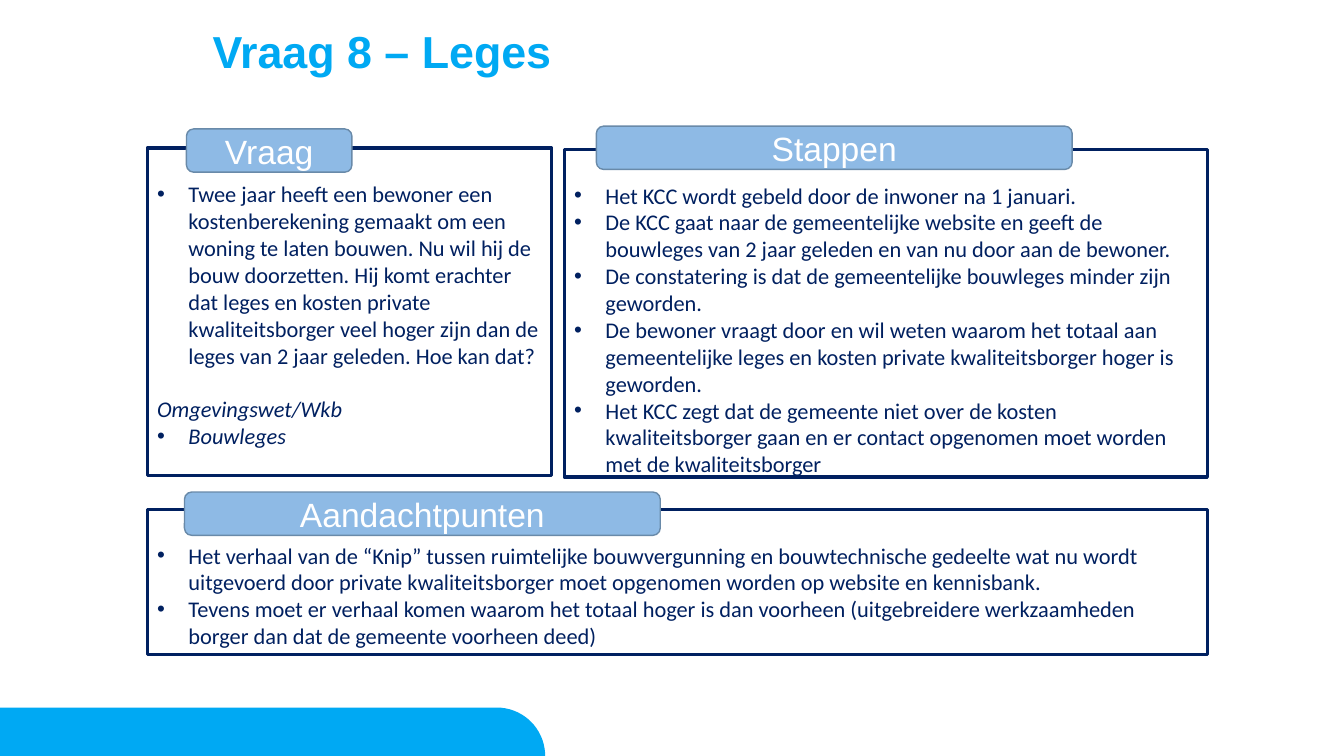
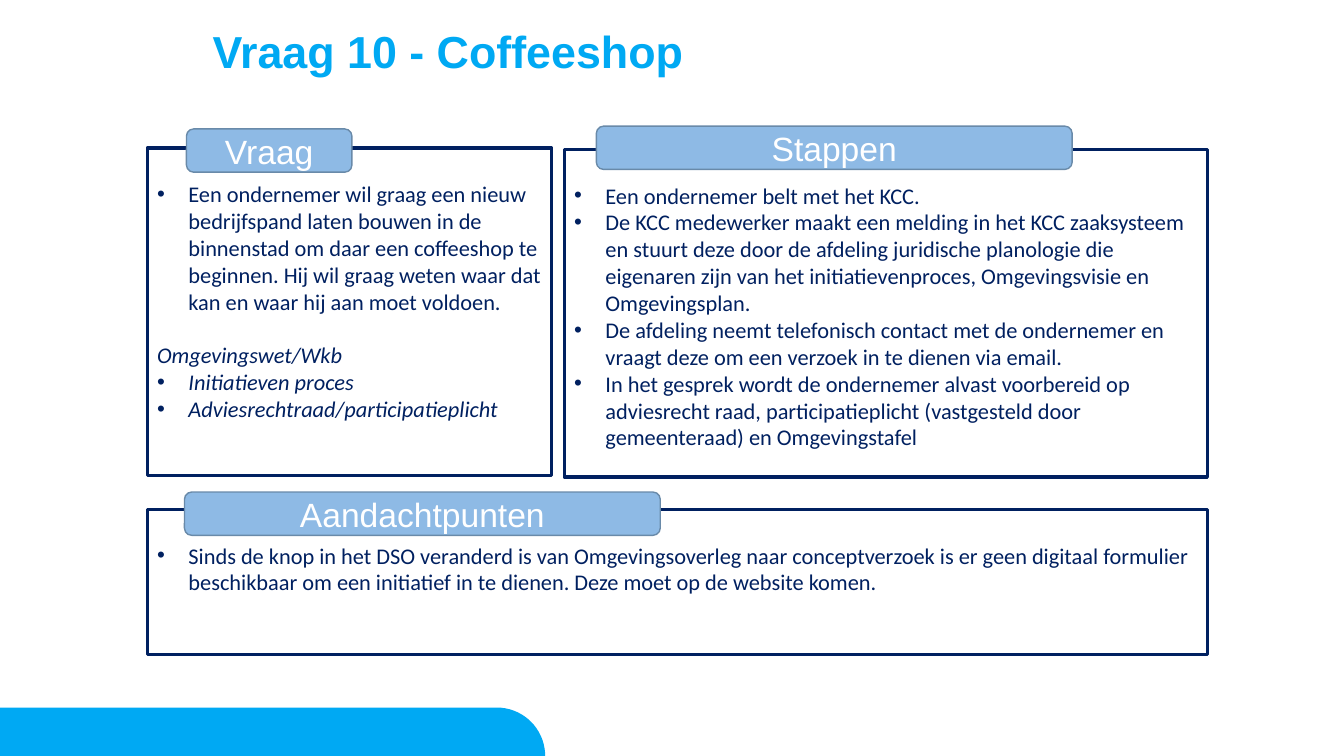
import math

from lxml import etree
from pptx import Presentation
from pptx.dml.color import RGBColor
from pptx.enum.shapes import MSO_SHAPE
from pptx.enum.text import MSO_ANCHOR, MSO_AUTO_SIZE, PP_ALIGN
from pptx.oxml.ns import qn
from pptx.util import Cm, Pt

RECTANGLE, ROUNDED = MSO_SHAPE.RECTANGLE, MSO_SHAPE.ROUNDED_RECTANGLE
TOP, MIDDLE = MSO_ANCHOR.TOP, MSO_ANCHOR.MIDDLE
LEFT, CENTER = PP_ALIGN.LEFT, PP_ALIGN.CENTER
NO_FIT = MSO_AUTO_SIZE.NONE
TITLE_ONLY = 5

SLIDE_WIDTH, SLIDE_HEIGHT = 33.87, 19.05
BRIGHT, NAVY, TAB_FILL, TAB_LINE, WHITE = "00A9F3", "002060", "8EBAE5", "698AA9", "FFFFFF"

TITLE_BOX = (5.11, 0.61, 25.73, 1.98)
BAND_WIDTH, BAND_HEIGHT = 13.74, 1.22
TAB_HEIGHT = 1.09
HANGING_INDENT = 0.79
TOPIC_GAP = 19

TITLE_FONT = {"name": "Arial", "size": Pt(32), "bold": True}
TAB_FONT = {"name": "Arial", "size": Pt(24)}
BODY_FONT = {"name": "Calibri", "size": Pt(16)}
TOPIC_FONT = {**BODY_FONT, "italic": True}

# heading: (panel box, tab offset from the panel corner and tab width)
PANELS = {
    "Vraag": ((3.71, 3.73, 10.19, 8.26), (0.99, -0.48, 4.17)),
    "Stappen": ((14.22, 3.76, 16.21, 8.26), (0.81, -0.58, 11.99)),
    "Aandachtpunten": ((3.71, 12.83, 26.72, 3.66), (0.94, -0.43, 11.99)),
}
TOPIC_HEADING = "Omgevingswet/Wkb"

CASES = [
    {
        "title": "Vraag 8 – Leges",
        "Vraag": [
            "Twee jaar heeft een bewoner een kostenberekening gemaakt om een woning te laten "
            "bouwen. Nu wil hij de bouw doorzetten. Hij komt erachter dat leges en kosten private "
            "kwaliteitsborger veel hoger zijn dan de leges van 2 jaar geleden. Hoe kan dat?",
        ],
        "topics": ["Bouwleges"],
        "Stappen": [
            "Het KCC wordt gebeld door de inwoner na 1 januari.",
            "De KCC gaat naar de gemeentelijke website en geeft de bouwleges van 2 jaar geleden "
            "en van nu door aan de bewoner.",
            "De constatering is dat de gemeentelijke bouwleges minder zijn geworden.",
            "De bewoner vraagt door en wil weten waarom het totaal aan gemeentelijke leges en "
            "kosten private kwaliteitsborger hoger is geworden.",
            "Het KCC zegt dat de gemeente niet over de kosten kwaliteitsborger gaan en er contact "
            "opgenomen moet worden met de kwaliteitsborger",
        ],
        "Aandachtpunten": [
            "Het verhaal van de “Knip” tussen ruimtelijke bouwvergunning en bouwtechnische "
            "gedeelte wat nu wordt uitgevoerd door private kwaliteitsborger moet opgenomen worden "
            "op website en kennisbank.",
            "Tevens moet er verhaal komen waarom het totaal hoger is dan voorheen (uitgebreidere "
            "werkzaamheden borger dan dat de gemeente voorheen deed)",
        ],
    },
    {
        "title": "Vraag 10 - Coffeeshop",
        "Vraag": [
            "Een ondernemer wil graag een nieuw bedrijfspand laten bouwen in de binnenstad om "
            "daar een coffeeshop te beginnen. Hij wil graag weten waar dat kan en waar hij aan "
            "moet voldoen.",
        ],
        "topics": ["Initiatieven proces", "Adviesrechtraad/participatieplicht"],
        "Stappen": [
            "Een ondernemer belt met het KCC.",
            "De KCC medewerker maakt een melding in het KCC zaaksysteem en stuurt deze door de "
            "afdeling juridische planologie die eigenaren zijn van het initiatievenproces, "
            "Omgevingsvisie en Omgevingsplan.",
            "De afdeling neemt telefonisch contact met de ondernemer en vraagt deze om een "
            "verzoek in te dienen via email.",
            "In het gesprek wordt de ondernemer alvast voorbereid op adviesrecht raad, "
            "participatieplicht (vastgesteld door gemeenteraad) en Omgevingstafel",
        ],
        "Aandachtpunten": [
            "Sinds de knop in het DSO veranderd is van Omgevingsoverleg naar conceptverzoek is er "
            "geen digitaal formulier beschikbaar om een initiatief in te dienen. Deze moet op de "
            "website komen.",
        ],
    },
]


def color(hex_string):
    return RGBColor.from_string(hex_string)


def set_all(target, values):
    for name, value in values.items():
        setattr(target, name, value)


def set_frame(frame, anchor, top=0.13, bottom=0.13):
    set_all(frame, {
        "word_wrap": True, "auto_size": NO_FIT, "vertical_anchor": anchor,
        "margin_left": Cm(0.25), "margin_right": Cm(0.25),
        "margin_top": Cm(top), "margin_bottom": Cm(bottom),
    })


def write(para, text, font, hex_string, align=LEFT):
    para.alignment = align
    span = para.add_run()
    span.text = text
    set_all(span.font, font)
    span.font.color.rgb = color(hex_string)


def add_bullet(para):
    properties = para._p.get_or_add_pPr()
    properties.set("marL", str(Cm(HANGING_INDENT)))
    properties.set("indent", str(-Cm(HANGING_INDENT)))
    etree.SubElement(properties, qn("a:buFont")).set("typeface", "Arial")
    etree.SubElement(properties, qn("a:buChar")).set("char", "•")


def add_box(slide, kind, box, line, width, fill=None):
    shape = slide.shapes.add_shape(kind, *map(Cm, box))
    shape.shadow.inherit = False
    if fill:
        shape.fill.solid()
        shape.fill.fore_color.rgb = color(fill)
    else:
        shape.fill.background()
    shape.line.color.rgb = color(line)
    shape.line.width = Pt(width)
    return shape


def add_band(slide):
    """Draw the bottom band, whose upper right corner is a quarter circle."""
    top, center = SLIDE_HEIGHT - BAND_HEIGHT, BAND_WIDTH - BAND_HEIGHT
    angles = [math.radians(degrees) for degrees in range(90, -1, -5)]
    corner = [(Cm(center + BAND_HEIGHT * math.cos(angle)),
               Cm(SLIDE_HEIGHT - BAND_HEIGHT * math.sin(angle))) for angle in angles]
    builder = slide.shapes.build_freeform(0, Cm(SLIDE_HEIGHT))
    builder.add_line_segments([(0, Cm(top)), *corner], close=True)
    band = builder.convert_to_shape()
    band.shadow.inherit = False
    band.fill.solid()
    band.fill.fore_color.rgb = color(BRIGHT)
    band.line.fill.background()


def add_title(slide, text, box):
    title = slide.shapes.title
    set_all(title, dict(zip(("left", "top", "width", "height"), map(Cm, box))))
    set_frame(title.text_frame, TOP)
    para = title.text_frame.paragraphs[0]
    para.line_spacing = 0.9
    write(para, text, TITLE_FONT, BRIGHT)


def add_panel(slide, heading, box, tab, points, topics=()):
    """Draw an outlined panel with bullets, optional topics and a heading tab."""
    frame = add_box(slide, RECTANGLE, box, NAVY, 2.25).text_frame
    set_frame(frame, TOP, top=0.82)
    entries = [(text, BODY_FONT, True) for text in points]
    if topics:
        entries.append((TOPIC_HEADING, TOPIC_FONT, False))
        entries += [(text, TOPIC_FONT, True) for text in topics]
    for index, (text, font, bulleted) in enumerate(entries):
        para = frame.add_paragraph() if index else frame.paragraphs[0]
        if bulleted:
            add_bullet(para)
        else:
            para.space_before = Pt(TOPIC_GAP)
        write(para, text, font, NAVY)

    shift_x, shift_y, width = tab
    tab_box = (box[0] + shift_x, box[1] + shift_y, width, TAB_HEIGHT)
    label = add_box(slide, ROUNDED, tab_box, TAB_LINE, 1, TAB_FILL).text_frame
    set_frame(label, MIDDLE)
    write(label.paragraphs[0], heading, TAB_FONT, WHITE, CENTER)


def add_case_slide(deck, case):
    slide = deck.slides.add_slide(deck.slide_layouts[TITLE_ONLY])
    add_band(slide)
    add_title(slide, case["title"], TITLE_BOX)
    for heading, (box, tab) in PANELS.items():
        topics = case["topics"] if heading == "Vraag" else ()
        add_panel(slide, heading, box, tab, case[heading], topics)


def main():
    deck = Presentation()
    deck.slide_width, deck.slide_height = Cm(SLIDE_WIDTH), Cm(SLIDE_HEIGHT)
    for case in CASES:
        add_case_slide(deck, case)
    deck.save("out.pptx")


if __name__ == "__main__":
    main()
